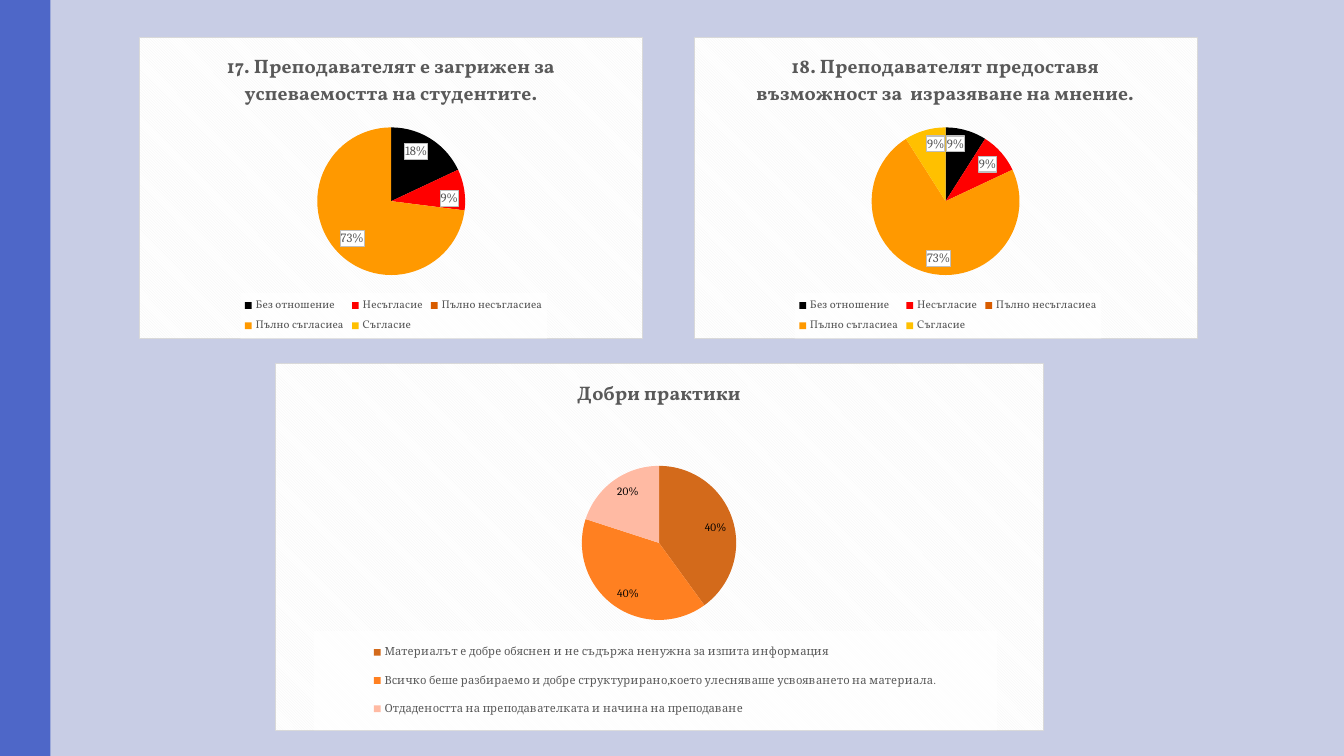
from lxml import etree
from pptx import Presentation
from pptx.chart.data import CategoryChartData
from pptx.dml.color import RGBColor
from pptx.enum.chart import XL_CHART_TYPE as ChartType
from pptx.enum.chart import XL_LABEL_POSITION as LabelPosition
from pptx.enum.chart import XL_LEGEND_POSITION as LegendPosition
from pptx.enum.shapes import MSO_SHAPE as Preset
from pptx.oxml import parse_xml
from pptx.oxml.ns import nsdecls, qn
from pptx.util import Cm, Pt

BLUE = RGBColor(0x4E, 0x67, 0xC8)
LAVENDER = RGBColor(0xC8, 0xCD, 0xE5)
GREY = RGBColor(0x59, 0x59, 0x59)
BLACK = RGBColor(0x00, 0x00, 0x00)
WHITE = RGBColor(0xFF, 0xFF, 0xFF)
RED = RGBColor(0xFF, 0x00, 0x00)
RUST = RGBColor(0xD8, 0x5C, 0x00)
ORANGE = RGBColor(0xFF, 0x99, 0x00)
AMBER = RGBColor(0xFF, 0xC0, 0x00)
BROWN = RGBColor(0xD3, 0x6A, 0x1B)
TANGERINE = RGBColor(0xFF, 0x80, 0x21)
PEACH = RGBColor(0xFF, 0xBA, 0xA3)

PANEL_STYLE = (
    '<a:pattFill prst="dkDnDiag"><a:fgClr><a:srgbClr val="F2F2F2"/></a:fgClr>'
    '<a:bgClr><a:srgbClr val="FFFFFF"/></a:bgClr></a:pattFill>'
    '<a:ln w="9525"><a:solidFill><a:srgbClr val="D9D9D9"/></a:solidFill></a:ln>')
LEGEND_STYLE = (
    '<a:solidFill><a:srgbClr val="FFFFFF"><a:alpha val="78000"/></a:srgbClr>'
    '</a:solidFill><a:ln><a:noFill/></a:ln>')
LABEL_STYLE = (
    '<a:solidFill><a:srgbClr val="FFFFFF"/></a:solidFill>'
    '<a:ln w="9525"><a:solidFill><a:srgbClr val="BFBFBF"/></a:solidFill></a:ln>')

OPINIONS = ["Без отношение", "Несъгласие", "Пълно несъгласиеа",
            "Пълно съгласиеа", "Съгласие"]
PRACTICES = [
    "Материалът е добре обяснен и не съдържа ненужна за изпита информация",
    "Всичко беше разбираемо и добре структурирано,което улесняваше "
    "усвояването на материала.",
    "Отдадеността на преподавателката и начина на преподаване",
]
OPINION_LOOK = dict(
    categories=OPINIONS, colors=[BLACK, RED, RUST, ORANGE, AMBER],
    pie_area=(0.35, 0.3, 0.3, 0.49), legend_area=(0.2, 0.85, 0.61, 0.15),
    legend_font="Vollkorn", label_size=9, label_color=GREY, boxed=True)
PRACTICE_LOOK = dict(
    categories=PRACTICES, colors=[BROWN, TANGERINE, PEACH],
    pie_area=(0.14, 0.28, 0.72, 0.42), legend_area=(0.05, 0.73, 0.89, 0.27),
    legend_font="Cambria", label_size=8, label_color=BLACK, boxed=False)
PIES = [
    ("17. Преподавателят е загрижен за успеваемостта на студентите.",
     (3.51, 0.92, 12.7, 7.62), [18, 9, 0, 73, 0], OPINION_LOOK),
    ("18. Преподавателят предоставя възможност за  изразяване на мнение.",
     (17.48, 0.92, 12.7, 7.62), [9, 9, 0, 73, 9], OPINION_LOOK),
    ("Добри практики",
     (6.92, 9.14, 19.38, 9.27), [40, 40, 20], PRACTICE_LOOK),
]


def shape_style(content):
    return parse_xml(f'<c:spPr {nsdecls("c", "a")}>{content}</c:spPr>')


def place(part, area, index, inner=False):
    """Give a chart part a fixed area, in fractions of the chart."""
    for old in part.findall(qn("c:layout")):
        part.remove(old)
    layout = etree.Element(qn("c:layout"))
    manual = etree.SubElement(layout, qn("c:manualLayout"))
    settings = [("xMode", "edge"), ("yMode", "edge"), *zip("xywh", area)]
    if inner:
        settings.insert(0, ("layoutTarget", "inner"))
    for tag, value in settings:
        etree.SubElement(manual, qn(f"c:{tag}")).set("val", str(value))
    part.insert(index, layout)


deck = Presentation()
deck.slide_width, deck.slide_height = Cm(33.87), Cm(19.05)
slide = deck.slides.add_slide(deck.slide_layouts[6])
slide.background.fill.solid()
slide.background.fill.fore_color.rgb = LAVENDER

side_bar = slide.shapes.add_shape(Preset.RECTANGLE, 0, 0, Cm(1.27), deck.slide_height)
side_bar.shadow.inherit = False
side_bar.fill.solid()
side_bar.fill.fore_color.rgb = BLUE
side_bar.line.fill.background()

for title, area, values, look in PIES:
    answers = CategoryChartData()
    answers.categories = look["categories"]
    answers.add_series("Series 1", values)
    chart = slide.shapes.add_chart(ChartType.PIE, *map(Cm, area), answers).chart
    chart.font.name, chart.font.size = "Cambria", Pt(10)
    chart.font.color.rgb = WHITE
    chart_space = chart.element if hasattr(chart, "element") else chart._chartSpace
    chart_space.find(qn("c:chart")).addnext(shape_style(PANEL_STYLE))

    chart.has_title = True
    chart.chart_title.include_in_layout = False
    chart.chart_title.text_frame.text = title
    title_font = chart.chart_title.text_frame.paragraphs[0].font
    title_font.name, title_font.size, title_font.bold = "Vollkorn", Pt(14), True
    title_font.color.rgb = GREY

    chart.has_legend = True
    legend = chart.legend
    legend.position = LegendPosition.BOTTOM
    legend.include_in_layout = False
    legend.font.name, legend.font.size = look["legend_font"], Pt(8)
    legend.font.color.rgb = GREY
    legend_xml = legend._element
    place(legend_xml, look["legend_area"], 1)
    legend_xml.find(qn("c:txPr")).addprevious(shape_style(LEGEND_STYLE))
    place(next(chart_space.iter(qn("c:plotArea"))), look["pie_area"], 0, inner=True)

    plot = chart.plots[0]
    plot.vary_by_categories = True
    series = plot.series[0]
    for index, color in enumerate(look["colors"]):
        slice_fill = series.points[index].format.fill
        slice_fill.solid()
        slice_fill.fore_color.rgb = color

    labels = series.data_labels
    labels.show_percentage, labels.show_value = True, False
    labels.number_format, labels.number_format_is_linked = "0%", False
    labels.position = LabelPosition.INSIDE_END
    labels.font.name, labels.font.size = "Cambria", Pt(look["label_size"])
    labels.font.color.rgb = look["label_color"]
    labels_xml = labels._element
    if look["boxed"]:
        labels_xml.find(qn("c:txPr")).addprevious(shape_style(LABEL_STYLE))
    empty_slices = [index for index, value in enumerate(values) if value == 0]
    for order, index in enumerate(empty_slices):
        labels_xml.insert(order, parse_xml(
            f'<c:dLbl {nsdecls("c")}><c:idx val="{index}"/>'
            '<c:delete val="1"/></c:dLbl>'))

deck.save("out.pptx")
